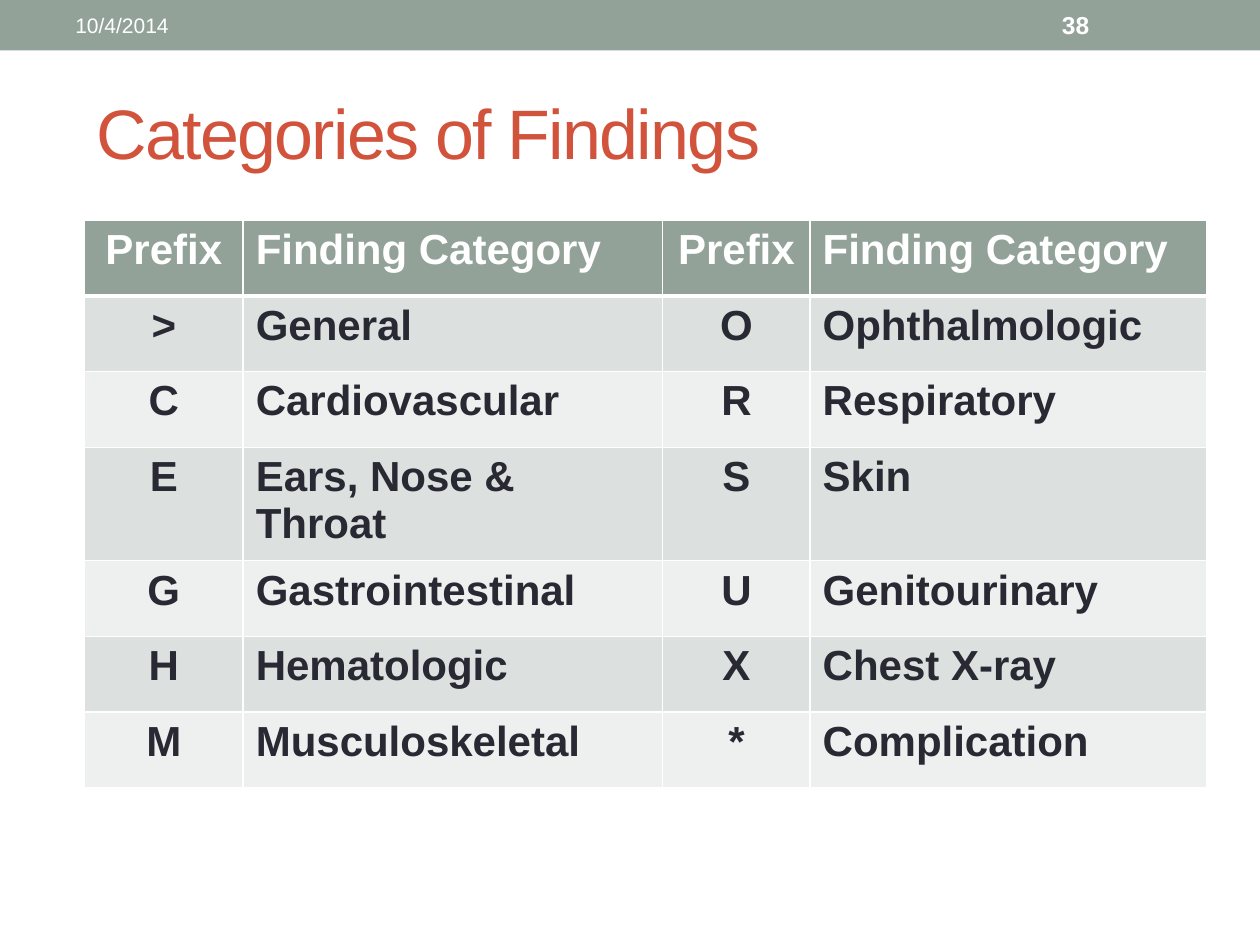
from dataclasses import dataclass

from lxml.etree import SubElement
from pptx import Presentation
from pptx.dml.color import RGBColor
from pptx.enum.shapes import MSO_SHAPE
from pptx.enum.text import MSO_ANCHOR, PP_ALIGN
from pptx.oxml.ns import qn
from pptx.slide import Slide
from pptx.util import Inches, Pt

COLORS = {
    "sage": "93A299",
    "title": "D2533C",
    "ink": "292934",
    "white": "FFFFFF",
    "odd_row": "DCE0DE",
    "even_row": "EEF0EF",
}
FINDINGS = [
    ("Prefix", "Finding Category", "Prefix", "Finding Category"),
    (">", "General", "O", "Ophthalmologic"),
    ("C", "Cardiovascular", "R", "Respiratory"),
    ("E", "Ears, Nose & Throat", "S", "Skin"),
    ("G", "Gastrointestinal", "U", "Genitourinary"),
    ("H", "Hematologic", "X", "Chest X-ray"),
    ("M", "Musculoskeletal", "*", "Complication"),
]
COLUMN_WIDTHS = [1.26, 3.33, 1.17, 3.15]
ROW_HEIGHT = 0.6


@dataclass
class SlideBuilder:
    """Draws styled elements on the current slide."""

    slide: Slide
    font: str = "Arial"

    def color(self, name):
        return RGBColor.from_string(COLORS[name])

    def box(self, *bounds):
        return [Inches(value) for value in bounds]

    def format_text(self, text_frame, size, color, bold=False, spacing=0):
        for paragraph in text_frame.paragraphs:
            for run in paragraph.runs:
                run.font.name = self.font
                run.font.size = Pt(size)
                run.font.bold = bold
                run.font.color.rgb = self.color(color)
                if spacing:
                    run._r.get_or_add_rPr().set("spc", str(spacing * 100))

    def band(self, *bounds):
        shape = self.slide.shapes.add_shape(MSO_SHAPE.RECTANGLE, *self.box(*bounds))
        shape.shadow.inherit = False
        shape.fill.solid()
        shape.fill.fore_color.rgb = self.color("sage")
        shape.line.fill.background()

    def text(self, text, bounds, size, color, **style):
        text_frame = self.slide.shapes.add_textbox(*self.box(*bounds)).text_frame
        text_frame.word_wrap = True
        text_frame.vertical_anchor = MSO_ANCHOR.MIDDLE
        text_frame.text = text
        self.format_text(text_frame, size, color, **style)

    def borders(self, cell, top, bottom):
        properties = cell._tc.get_or_add_tcPr()
        for side, width in {"L": 1, "R": 1, "T": top, "B": bottom}.items():
            line = SubElement(properties, qn(f"a:ln{side}"), w=str(Pt(width)))
            fill = SubElement(line, qn("a:solidFill"))
            SubElement(fill, qn("a:srgbClr"), val=COLORS["white"])

    def table(self, rows, left, top, widths, row_height):
        bounds = self.box(left, top, sum(widths), row_height * len(rows))
        table = self.slide.shapes.add_table(len(rows), len(widths), *bounds).table
        for column, width in zip(table.columns, widths):
            column.width = Inches(width)
        for row_index, values in enumerate(rows):
            table.rows[row_index].height = Inches(row_height)
            header = row_index == 0
            fill = "sage" if header else "odd_row" if row_index % 2 else "even_row"
            for column_index, value in enumerate(values):
                cell = table.cell(row_index, column_index)
                self.borders(cell, 3 if row_index == 1 else 1, 3 if header else 1)
                cell.fill.solid()
                cell.fill.fore_color.rgb = self.color(fill)
                cell.text_frame.text = value
                if column_index % 2 == 0:
                    cell.text_frame.paragraphs[0].alignment = PP_ALIGN.CENTER
                self.format_text(cell.text_frame, 24, "white" if header else "ink", bold=True)


def main():
    presentation = Presentation()
    presentation.slide_width, presentation.slide_height = Inches(10), Inches(7.5)
    builder = SlideBuilder(presentation.slides.add_slide(presentation.slide_layouts[6]))
    builder.band(0, 0, 10, 0.4)
    builder.text("Categories of Findings", (0.67, 0.5, 8.92, 1.08), 40, "title", spacing=-1)
    builder.table(FINDINGS, 0.67, 1.75, COLUMN_WIDTHS, ROW_HEIGHT)
    builder.text("10/4/2014", (0.5, 0.02, 3.17, 0.36), 12, "white")
    builder.text("38", (8.33, 0.02, 1.17, 0.36), 14, "white", bold=True)
    presentation.save("out.pptx")


if __name__ == "__main__":
    main()
